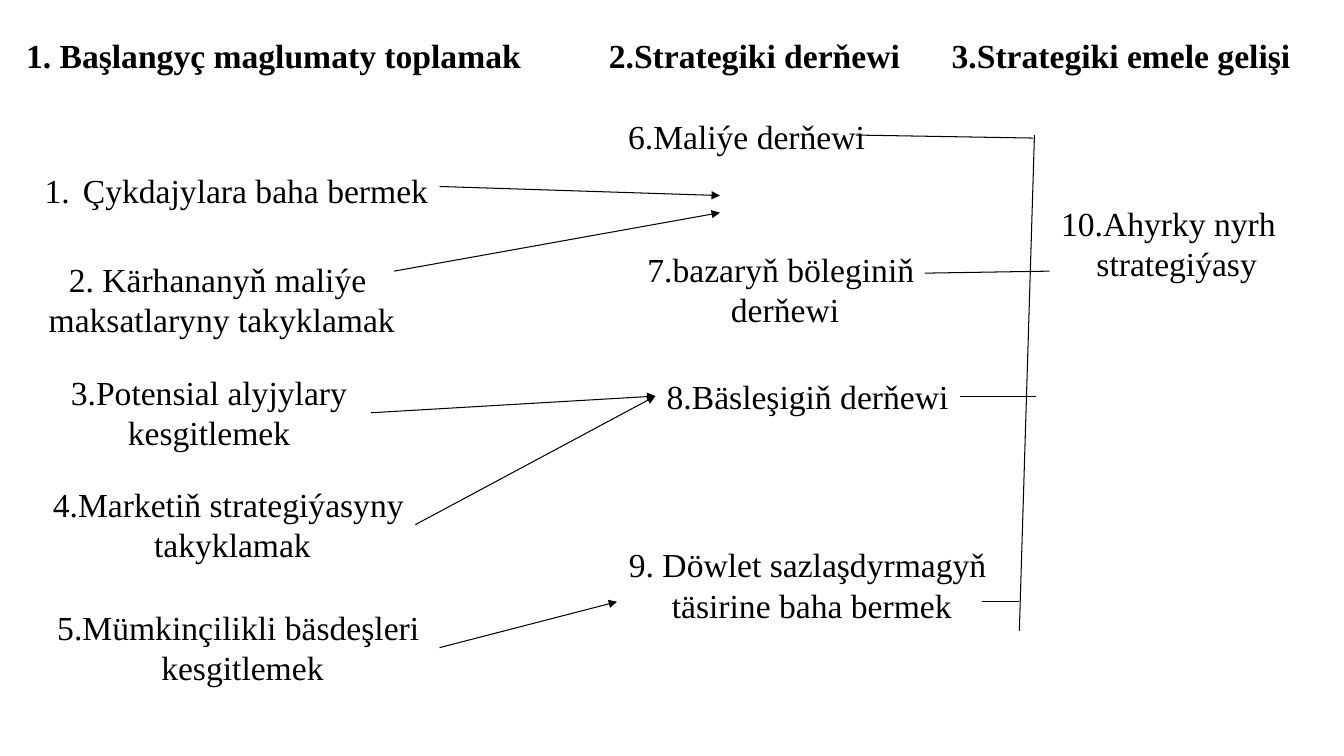
"""Build a slide showing the three stages of forming a price strategy."""
from lxml.etree import SubElement
from pptx import Presentation
from pptx.dml.color import RGBColor
from pptx.enum.shapes import MSO_CONNECTOR
from pptx.enum.text import MSO_AUTO_SIZE, PP_ALIGN
from pptx.oxml.ns import qn
from pptx.util import Pt

PX = 9144
LEFT, RIGHT = 1, 3
FONT = "Times New Roman"
BLACK = "000000"

presentation = Presentation()
presentation.slide_width = 1333 * PX
presentation.slide_height = 750 * PX
slide = presentation.slides.add_slide(presentation.slide_layouts[6])


def color(value):
    return RGBColor.from_string(value)


def add_text(left, top, width, height, lines, align, bold=False, wrap=False, numbered=False):
    box = slide.shapes.add_textbox(left * PX, top * PX, width * PX, height * PX)
    frame = box.text_frame
    frame.word_wrap = wrap
    frame.auto_size = MSO_AUTO_SIZE.SHAPE_TO_FIT_TEXT
    for index, line in enumerate(lines):
        paragraph = frame.add_paragraph() if index else frame.paragraphs[0]
        paragraph.alignment = align
        if numbered:
            paragraph.line_spacing = 1.15
            properties = paragraph._p.get_or_add_pPr()
            properties.set("marL", str(38 * PX))
            properties.set("indent", str(-38 * PX))
            SubElement(properties, qn("a:buFont"), typeface="+mj-lt")
            SubElement(properties, qn("a:buAutoNum"), type="arabicPeriod")
        run = paragraph.add_run()
        run.text = line
        run.font.name = FONT
        run.font.size = Pt(24)
        run.font.bold = bold
        run.font.color.rgb = color(BLACK)
    return box


headings = [
    (16, 549, "1. Başlangyç maglumaty toplamak", True),
    (594, 312, "2.Strategiki derňewi", False),
    (934, 359, "3.Strategiki emele gelişi", False),
]
for left, width, text, wrap in headings:
    add_text(left, 30, width, 50, [text], PP_ALIGN.LEFT, bold=True, wrap=wrap)

steps = {
    "costs": (33, 158, 403, 54, ["Çykdajylara baha bermek"]),
    "goals": (37, 252, 366, 91, ["2. Kärhananyň maliýe ", "maksatlaryny takyklamak"]),
    "buyers": (55, 364, 313, 91, ["3.Potensial alyjylary ", "kesgitlemek "]),
    "marketing": (41, 475, 371, 91, ["4.Marketiň strategiýasyny", " takyklamak"]),
    "rivals": (45, 597, 391, 91, ["5.Mümkinçilikli bäsdeşleri ", "kesgitlemek"]),
    "finance": (612, 110, 257, 50, ["6.Maliýe derňewi"]),
    "segment": (631, 242, 287, 91, ["7.bazaryň böleginiň", " derňewi"]),
    "competition": (650, 368, 302, 50, ["8.Bäsleşigiň derňewi"]),
    "state": (612, 535, 378, 91, ["9. Döwlet sazlaşdyrmagyň", " täsirine baha bermek"]),
    "final": (1041, 196, 244, 91, ["10.Ahyrky nyrh ", " strategiýasy"]),
}
boxes = {
    name: add_text(*step, PP_ALIGN.CENTER, numbered=name == "costs")
    for name, step in steps.items()
}

links = [
    (412, 520, 650, 393, "marketing", "competition", True),
    (369, 409, 650, 393, "buyers", "competition", True),
    (391, 269, 714, 211, None, None, True),
    (436, 184, 714, 194, "costs", None, True),
    (436, 642, 612, 597, "rivals", None, True),
    (849, 134, 1025, 137, None, None, False),
    (1026, 134, 1011, 626, None, None, False),
    (917, 271, 1041, 269, None, None, False),
    (952, 393, 1028, 393, "competition", None, False),
    (974, 597, 1011, 597, None, None, False),
]
for start_x, start_y, end_x, end_y, source, target, arrow in links:
    connector = slide.shapes.add_connector(
        MSO_CONNECTOR.STRAIGHT, start_x * PX, start_y * PX, end_x * PX, end_y * PX
    )
    if source:
        connector.begin_connect(boxes[source], RIGHT)
    if target:
        connector.end_connect(boxes[target], LEFT)
    connector.line.color.rgb = color(BLACK)
    connector.line.width = Pt(0.75)
    if arrow:
        SubElement(connector.line._get_or_add_ln(), qn("a:tailEnd"), type="triangle")
    SubElement(connector._element.spPr, qn("a:effectLst"))

presentation.save("out.pptx")
